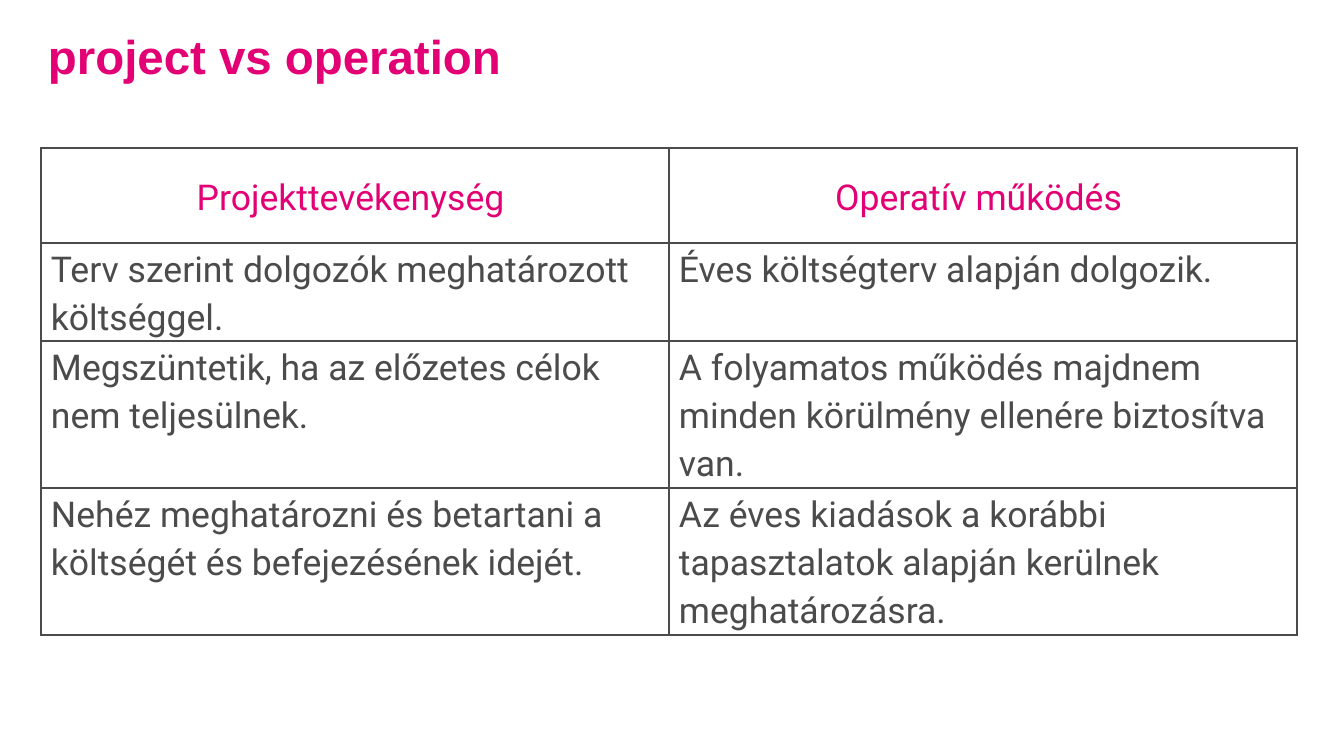
from dataclasses import dataclass

from lxml import etree
from pptx import Presentation
from pptx.dml.color import RGBColor
from pptx.enum.text import MSO_ANCHOR, MSO_AUTO_SIZE, PP_ALIGN
from pptx.oxml.ns import qn
from pptx.util import Pt

LEFT, CENTER = PP_ALIGN.LEFT, PP_ALIGN.CENTER
TOP, MIDDLE = MSO_ANCHOR.TOP, MSO_ANCHOR.MIDDLE
NO_FIT = MSO_AUTO_SIZE.NONE
EMU_PER_PX = 8572.5
TITLE_ONLY = 5

ROW_HEIGHTS = [95, 98, 147, 147]
COMPARISON = [
    ("Projekttevékenység ", "Operatív működés "),
    ("Terv szerint dolgozók meghatározott költséggel.",
     "Éves költségterv alapján dolgozik."),
    ("Megszüntetik, ha az előzetes célok nem teljesülnek.",
     "A folyamatos működés majdnem minden körülmény ellenére biztosítva van."),
    ("Nehéz meghatározni és betartani a költségét és befejezésének idejét.",
     "Az éves kiadások a korábbi tapasztalatok alapján kerülnek meghatározásra."),
]


@dataclass(frozen=True)
class Theme:
    """Colours, fonts and type sizes of the slide."""
    accent: str = "E20074"
    ink: str = "4B4B4B"
    paper: str = "FFFFFF"
    title_font: str = "Arial"
    body_font: str = "Roboto"
    title_size: int = 32
    body_size: int = 24
    border: int = 1


def px(length):
    """Turn pixels into EMU."""
    return round(length * EMU_PER_PX)


def apply(target, values):
    """Set each named attribute on the target."""
    for name, value in values.items():
        setattr(target, name, value)


class SlideBuilder:
    """Draws styled elements on the current slide."""

    def __init__(self, deck, theme):
        """Add a title-only slide to the deck."""
        self.theme = theme
        self.page = deck.slides.add_slide(deck.slide_layouts[TITLE_ONLY])

    def paragraph(self, frame, text, font, color, align, spacing):
        """Put one formatted paragraph into a text frame."""
        para = frame.paragraphs[0]
        apply(para, {"alignment": align, "line_spacing": spacing})
        span = para.add_run()
        span.text = text
        apply(span.font, font)
        span.font.color.rgb = RGBColor.from_string(color)

    def title(self, text, left, top, width, height):
        """Place and format the title placeholder."""
        box = self.page.shapes.title
        apply(box, {"left": px(left), "top": px(top),
                    "width": px(width), "height": px(height)})
        frame = box.text_frame
        apply(frame, {"margin_left": 0, "margin_right": 0, "margin_top": 0,
                      "margin_bottom": 0, "word_wrap": True,
                      "auto_size": NO_FIT, "vertical_anchor": MIDDLE})
        font = {"name": self.theme.title_font, "bold": True,
                "size": Pt(self.theme.title_size)}
        self.paragraph(frame, text, font, self.theme.accent, LEFT, 0.9)

    def borders(self, cell):
        """Draw a thin line on every side of a cell."""
        properties = cell._tc.get_or_add_tcPr()
        for side in ("a:lnL", "a:lnR", "a:lnT", "a:lnB"):
            line = etree.SubElement(properties, qn(side), w=str(Pt(self.theme.border)))
            fill = etree.SubElement(line, qn("a:solidFill"))
            etree.SubElement(fill, qn("a:srgbClr"), val=self.theme.ink)

    def cell(self, cell, text, is_header):
        """Fill, outline and label one table cell."""
        self.borders(cell)
        cell.fill.solid()
        cell.fill.fore_color.rgb = RGBColor.from_string(self.theme.paper)
        apply(cell, {"margin_left": px(10), "margin_right": px(10),
                     "margin_top": 0, "margin_bottom": 0,
                     "vertical_anchor": MIDDLE if is_header else TOP})
        font = {"name": self.theme.body_font, "bold": False,
                "size": Pt(self.theme.body_size)}
        color = self.theme.accent if is_header else self.theme.ink
        self.paragraph(cell.text_frame, text, font, color,
                       CENTER if is_header else LEFT, 1.15)

    def table(self, rows, heights, left, top, column_width):
        """Add a table with equal columns and a header row."""
        count = len(rows[0])
        table = self.page.shapes.add_table(
            len(rows), count, px(left), px(top),
            px(column_width * count), px(sum(heights))).table
        apply(table, {"first_row": False, "horz_banding": False})
        for column in table.columns:
            column.width = px(column_width)
        for index, (texts, height) in enumerate(zip(rows, heights)):
            table.rows[index].height = px(height)
            for position, text in enumerate(texts):
                self.cell(table.cell(index, position), text, index == 0)


def main():
    """Build and save the deck."""
    deck = Presentation()
    apply(deck, {"slide_width": px(1344), "slide_height": px(756)})
    builder = SlideBuilder(deck, Theme())
    builder.title("project vs operation", 48, 30, 1249, 59)
    builder.table(COMPARISON, ROW_HEIGHTS, 41, 148, 628)
    deck.save("out.pptx")


if __name__ == "__main__":
    main()
